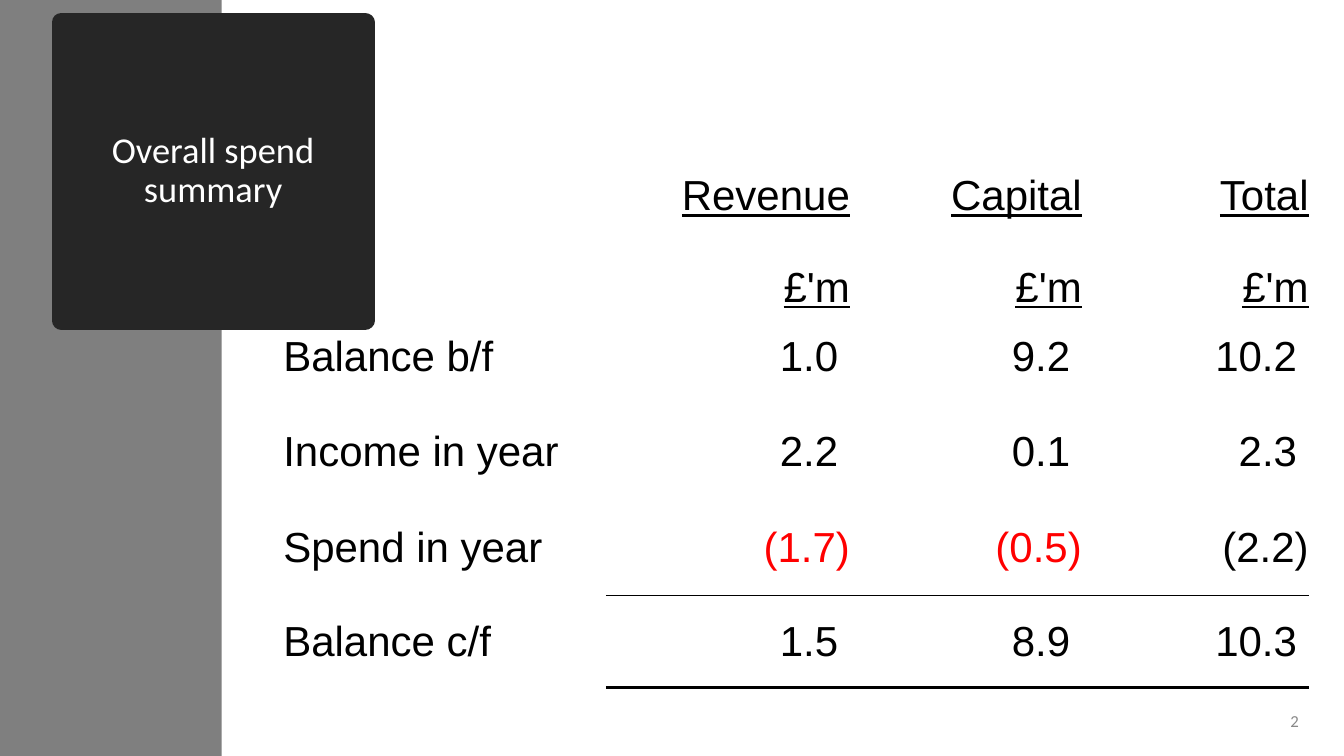
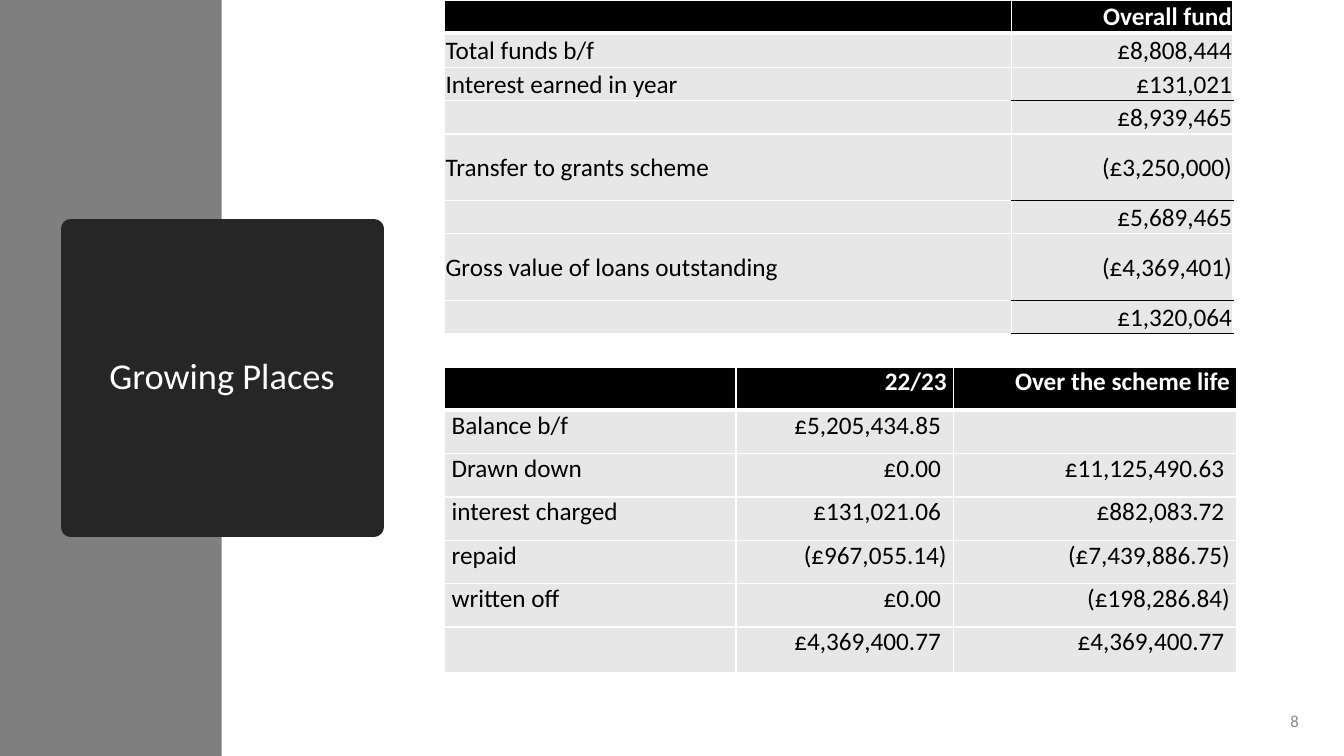
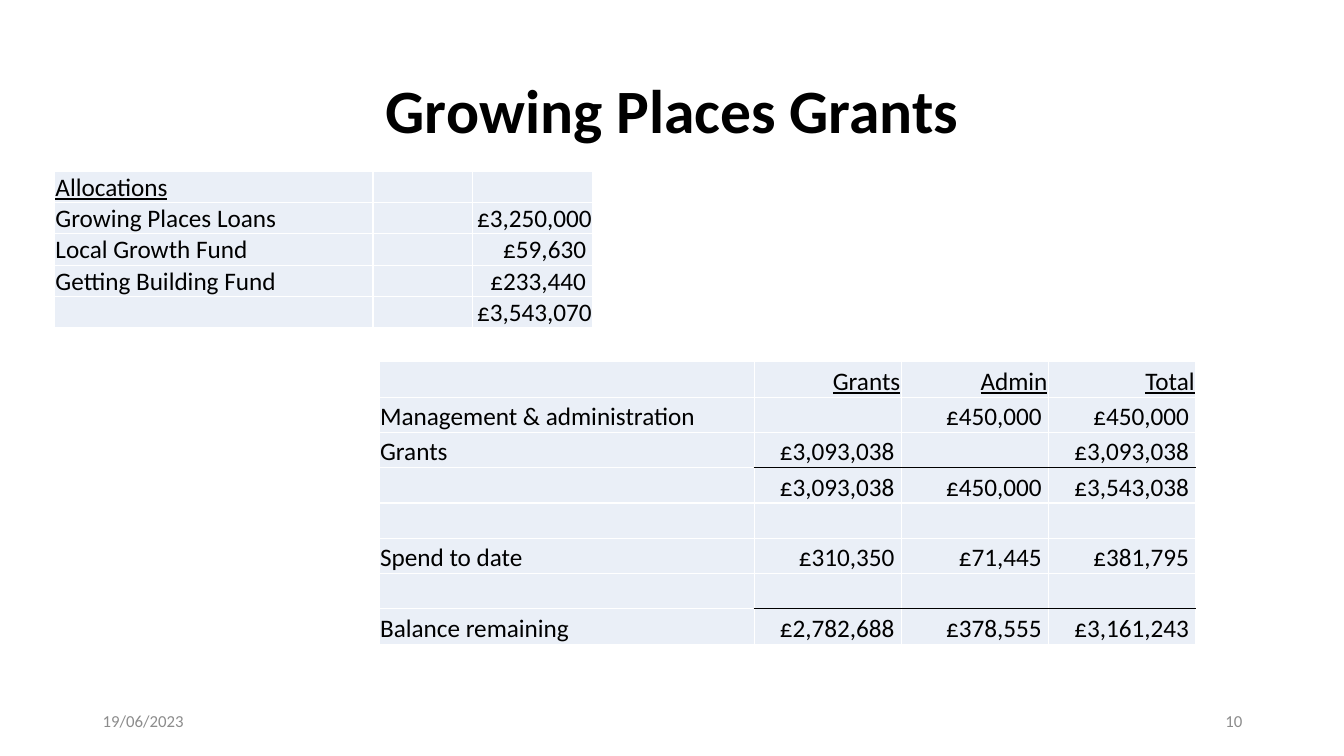
from dataclasses import dataclass

from lxml.etree import SubElement
from pptx import Presentation
from pptx.dml.color import RGBColor
from pptx.enum.shapes import MSO_SHAPE
from pptx.enum.text import MSO_ANCHOR, PP_ALIGN
from pptx.oxml import parse_xml
from pptx.oxml.ns import nsdecls, qn
from pptx.util import Inches, Pt


@dataclass(frozen=True)
class Theme:
    black: str = "000000"
    white: str = "FFFFFF"
    red: str = "FF0000"
    band: str = "7F7F7F"
    title_box: str = "262626"
    number: str = "898989"
    footer: str = "8C8C8C"
    grey_cell: str = "E7E7E7"
    blue_cell: str = "EAEFF7"
    font: str = "Calibri"
    summary_font: str = "Arial"
    heading_size: int = 44
    summary_size: int = 30
    box_title_size: int = 26
    body_size: int = 18
    footer_size: int = 12


THEME = Theme()
GRID = (THEME.white, 1)
TOTAL_LINE = (THEME.black, 1)
HEADER_LINE = (THEME.white, 3)
TIGHT = (0.01, 0.01, 0.01, 0)
BODY = {"name": THEME.font, "size": THEME.body_size, "color": THEME.black}
UNDERLINED = {"underline": True}
BOLD_WHITE = {"bold": True, "color": THEME.white}
RED = {"color": THEME.red}

# Each rule is row: (first column, line), drawn beneath that row.
SPEND_SUMMARY = {
    "at": (2.81, 1.27), "columns": (3.2, 2.42, 2.3, 2.25),
    "heights": (0.91, 0.91, 0.91, 0.97, 0.94, 0.91),
    "rows": [
        ("", "Revenue", "Capital", "Total"),
        ("", "£'m", "£'m", "£'m"),
        ("Balance b/f", "1.0 ", "9.2 ", "10.2 "),
        ("Income in year", "2.2 ", "0.1 ", "2.3 "),
        ("Spend in year", "(1.7)", "(0.5)", "(2.2)"),
        ("Balance c/f", "1.5 ", "8.9 ", "10.3 "),
    ],
    "text": {"name": THEME.summary_font, "size": THEME.summary_size, "color": THEME.black},
    "header_rows": 2, "header_text": UNDERLINED, "header_anchor": MSO_ANCHOR.BOTTOM,
    "special": {(4, 1): RED, (4, 2): RED},
    "anchor": MSO_ANCHOR.MIDDLE, "margins": (0, 0, 0, 0),
    "rules": {4: (1, (THEME.black, 0.5)), 5: (1, (THEME.black, 2))},
}

LOAN_STYLE = {
    "text": BODY, "header_text": BOLD_WHITE, "fill": THEME.grey_cell,
    "header_fill": THEME.black, "grid": GRID,
}
LOANS = {
    **LOAN_STYLE,
    "at": (4.41, 3.64), "columns": (2.89, 2.16, 2.81),
    "heights": (0.43,) * 6 + (0.45,),
    "rows": [
        ("", "22/23", "Over the scheme life"),
        ("Balance b/f", "£5,205,434.85 ", ""),
        ("Drawn down", "£0.00 ", "£11,125,490.63 "),
        ("interest charged", "£131,021.06 ", "£882,083.72 "),
        ("repaid", "(£967,055.14)", "(£7,439,886.75)"),
        ("written off", "£0.00 ", "(£198,286.84)"),
        ("", "£4,369,400.77 ", "£4,369,400.77 "),
    ],
    "anchor": MSO_ANCHOR.TOP, "margins": (0.07, 0, 0.07, 0),
    "rules": {0: (0, HEADER_LINE)},
}
FUND = {
    **LOAN_STYLE,
    "at": (4.41, 0), "columns": (5.62, 2.2),
    "heights": (0.33, 0.34, 0.33, 0.33, 0.66, 0.33, 0.66, 0.33),
    "rows": [
        ("", "Overall fund"),
        ("Total funds b/f", "£8,808,444"),
        ("Interest earned in year", "£131,021"),
        ("", "£8,939,465"),
        ("Transfer to grants scheme", "(£3,250,000)"),
        ("", "£5,689,465"),
        ("Gross value of loans outstanding", "(£4,369,401)"),
        ("", "£1,320,064"),
    ],
    "anchor": MSO_ANCHOR.MIDDLE, "margins": TIGHT,
    "rules": {0: (0, HEADER_LINE), **{row: (1, TOTAL_LINE) for row in (2, 4, 6, 7)}},
}

GRANT_STYLE = {
    "text": BODY, "header_text": UNDERLINED, "fill": THEME.blue_cell, "grid": GRID,
    "anchor": MSO_ANCHOR.BOTTOM, "margins": TIGHT,
}
ALLOCATIONS = {
    **GRANT_STYLE,
    "at": (0.54, 1.7), "columns": (3.16, 0.99, 1.19), "heights": (0.31,) * 5,
    "rows": [
        ("Allocations", "", ""),
        ("Growing Places Loans", "", "£3,250,000 "),
        ("Local Growth Fund", "", "£59,630 "),
        ("Getting Building Fund", "", "£233,440 "),
        ("", "", "£3,543,070 "),
    ],
}
GRANTS = {
    **GRANT_STYLE,
    "at": (3.76, 3.59), "columns": (3.72, 1.46, 1.46, 1.46), "heights": (0.35,) * 8,
    "rows": [
        ("", "Grants", "Admin", "Total"),
        ("Management & administration", "", "£450,000 ", "£450,000 "),
        ("Grants", "£3,093,038 ", "", "£3,093,038 "),
        ("", "£3,093,038 ", "£450,000 ", "£3,543,038 "),
        ("", "", "", ""),
        ("Spend to date", "£310,350 ", "£71,445 ", "£381,795 "),
        ("", "", "", ""),
        ("Balance remaining", "£2,782,688 ", "£378,555 ", "£3,161,243 "),
    ],
    "rules": {2: (1, TOTAL_LINE), 6: (1, TOTAL_LINE)},
}

BAND_PAGES = [
    {"title": "Overall spend summary", "box_at": (0.61, 0.22), "number": "2",
     "tables": [SPEND_SUMMARY]},
    {"title": "Growing Places", "box_at": (0.7, 2.27), "number": "8",
     "tables": [LOANS, FUND]},
]
GRANTS_PAGE = {"title": "Growing Places Grants", "date": "19/06/2023", "number": "10",
               "tables": [ALLOCATIONS, GRANTS]}


def write(frame, text, style, align=PP_ALIGN.LEFT, spacing=None):
    para = frame.paragraphs[0]
    para.alignment = align
    if spacing:
        para.line_spacing = spacing
    if not text:
        return
    span = para.add_run()
    span.text = text
    for name, value in style.items():
        if name == "color":
            span.font.color.rgb = RGBColor.from_string(value)
        else:
            setattr(span.font, name, Pt(value) if name == "size" else value)


def add_text(page, area, text, style, align=PP_ALIGN.LEFT, spacing=None):
    frame = page.shapes.add_textbox(*map(Inches, area)).text_frame
    frame.word_wrap = True
    frame.vertical_anchor = MSO_ANCHOR.MIDDLE
    write(frame, text, style, align, spacing)


def add_footer(page, left, width, text, color, align=PP_ALIGN.RIGHT):
    style = {"name": THEME.font, "size": THEME.footer_size, "color": color}
    add_text(page, (left, 6.95, width, 0.4), text, style, align)


def add_block(page, area, color):
    block = page.shapes.add_shape(MSO_SHAPE.RECTANGLE, *map(Inches, area))
    block.shadow.inherit = False
    block.fill.solid()
    block.fill.fore_color.rgb = RGBColor.from_string(color)
    block.line.fill.background()
    return block


def add_title_box(page, at, title):
    """Dark square whose thick, round-joined outline gives it soft corners."""
    box = add_block(page, (*at, 3.01, 2.96), THEME.title_box)
    box.line.color.rgb = RGBColor.from_string(THEME.title_box)
    box.line.width = Pt(13.75)
    SubElement(box.line._get_or_add_ln(), qn("a:round"))
    box.text_frame.word_wrap = True
    box.text_frame.vertical_anchor = MSO_ANCHOR.MIDDLE
    style = {"name": THEME.font, "size": THEME.box_title_size, "color": THEME.white}
    write(box.text_frame, title, style, PP_ALIGN.CENTER, 0.9)


def set_borders(cell, lines):
    """Lines come in the order left, right, top, bottom; None hides a border."""
    properties = cell._tc.get_or_add_tcPr()
    for position, (side, line) in enumerate(zip("LRTB", lines)):
        color, width = line or (None, 0)
        paint = (f'<a:solidFill><a:srgbClr val="{color}"/></a:solidFill>'
                 if line else "<a:noFill/>")
        border = parse_xml(
            f'<a:ln{side} {nsdecls("a")} w="{int(Pt(width))}">{paint}</a:ln{side}>')
        properties.insert(position, border)


def fill_cell(cell, data, row, column):
    is_header = row < data.get("header_rows", 1)
    style = {**data["text"], **data.get("special", {}).get((row, column), {})}
    fill, anchor = data.get("fill"), data["anchor"]
    if is_header:
        style.update(data["header_text"])
        fill = data.get("header_fill", fill)
        anchor = data.get("header_anchor", anchor)
    for side, margin in zip(("left", "top", "right", "bottom"), data["margins"]):
        setattr(cell, f"margin_{side}", Inches(margin))
    cell.vertical_anchor = anchor
    if fill:
        cell.fill.solid()
        cell.fill.fore_color.rgb = RGBColor.from_string(fill)
    else:
        cell.fill.background()
    write(cell.text_frame, data["rows"][row][column], style,
          PP_ALIGN.RIGHT if column else PP_ALIGN.LEFT)

    grid = data.get("grid")

    def line_below(index):
        first_column, line = data.get("rules", {}).get(index, (0, grid))
        return line if column >= first_column else grid

    set_borders(cell, (grid, grid, line_below(row - 1), line_below(row)))


def add_data_table(page, data):
    widths, heights = data["columns"], data["heights"]
    area = (*data["at"], sum(widths), sum(heights))
    table = page.shapes.add_table(len(heights), len(widths), *map(Inches, area)).table
    table.first_row = table.horz_banding = False
    for column, width in zip(table.columns, widths):
        column.width = Inches(width)
    for row, height in enumerate(heights):
        table.rows[row].height = Inches(height)
        for column in range(len(widths)):
            fill_cell(table.cell(row, column), data, row, column)


def build_band_page(page, content):
    add_block(page, (0, 0, 2.2, 7.5), THEME.band)
    add_title_box(page, content["box_at"], content["title"])
    add_footer(page, 12.37, 0.61, content["number"], THEME.number)


def build_grants_page(page, content):
    style = {"name": THEME.font, "size": THEME.heading_size, "bold": True,
             "color": THEME.black}
    add_text(page, (0.92, 0.4, 11.5, 1.45), content["title"], style, PP_ALIGN.CENTER, 0.9)
    add_footer(page, 0.92, 3, content["date"], THEME.footer, PP_ALIGN.LEFT)
    add_footer(page, 9.42, 3, content["number"], THEME.footer)


def main():
    deck = Presentation()
    deck.slide_width, deck.slide_height = Inches(13.33), Inches(7.5)
    pages = [(build_band_page, content) for content in BAND_PAGES]
    pages.append((build_grants_page, GRANTS_PAGE))
    for build, content in pages:
        page = deck.slides.add_slide(deck.slide_layouts[6])
        build(page, content)
        for data in content["tables"]:
            add_data_table(page, data)
    deck.save("out.pptx")


if __name__ == "__main__":
    main()
